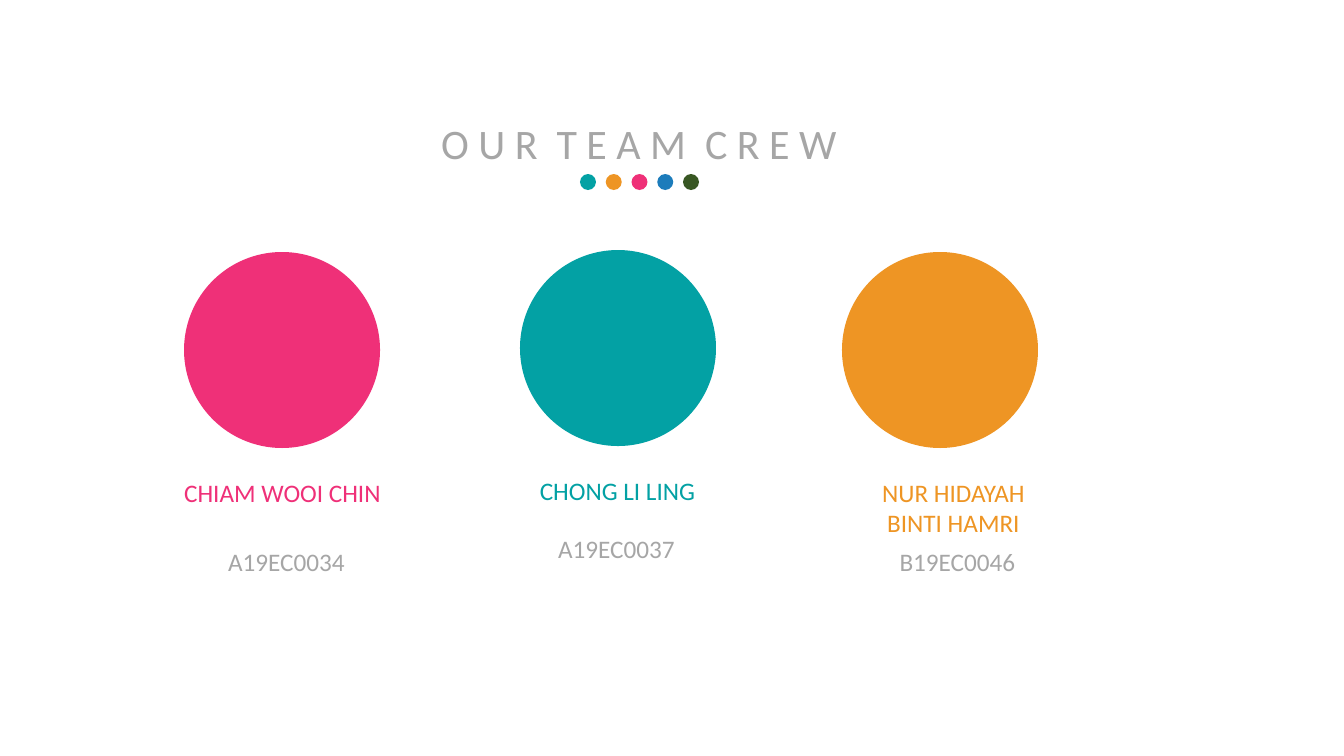
"""Build the team crew slide: a title, a row of dots and three members."""
from pptx import Presentation
from pptx.dml.color import RGBColor
from pptx.enum.shapes import MSO_SHAPE
from pptx.enum.text import PP_ALIGN
from pptx.util import Emu, Pt

TEAL = RGBColor(0x03, 0xA1, 0xA4)
ORANGE = RGBColor(0xEE, 0x95, 0x24)
PINK = RGBColor(0xEF, 0x30, 0x78)
BLUE = RGBColor(0x1C, 0x7C, 0xBB)
GREEN = RGBColor(0x38, 0x57, 0x23)
GRAY = RGBColor(0xA6, 0xA6, 0xA6)

FONT = "Calibri"
TITLE = "O U R  T E A M  C R E W"
TITLE_BOX = (338, 113, 602, 61)
DOT_COLORS = [TEAL, ORANGE, PINK, BLUE, GREEN]
DOTS_LEFT, DOTS_TOP, DOT_SIZE, DOTS_SPAN = 580, 174, 16, 103
PORTRAIT_SIZE, LABEL_WIDTH, LINE_HEIGHT = 196, 219, 40
MEMBERS = [
    {"name": "CHIAM WOOI CHIN", "matric": "A19EC0034", "color": PINK,
     "portrait_at": (184, 252), "name_at": (173, 472), "matric_at": (177, 541)},
    {"name": "CHONG LI LING", "matric": "A19EC0037", "color": TEAL,
     "portrait_at": (520, 250), "name_at": (508, 470), "matric_at": (507, 528)},
    {"name": "NUR HIDAYAH BINTI HAMRI", "matric": "B19EC0046", "color": ORANGE,
     "portrait_at": (842, 252), "name_at": (844, 472), "matric_at": (848, 541)},
]


def px(length):
    return Emu(round(length * 914400 / 100.8))


def add_circle(slide, left, top, size, color):
    circle = slide.shapes.add_shape(
        MSO_SHAPE.OVAL, px(left), px(top), px(size), px(size))
    circle.shadow.inherit = False
    circle.fill.solid()
    circle.fill.fore_color.rgb = color
    circle.line.fill.background()


def add_label(slide, text, box, size, color):
    frame = slide.shapes.add_textbox(*map(px, box)).text_frame
    frame.word_wrap = True
    frame.text = text
    paragraph = frame.paragraphs[0]
    paragraph.alignment = PP_ALIGN.CENTER
    font = paragraph.runs[0].font
    font.name = FONT
    font.size = Pt(size)
    font.color.rgb = color


def main():
    deck = Presentation()
    deck.slide_width, deck.slide_height = px(1344), px(756)
    slide = deck.slides.add_slide(deck.slide_layouts[6])

    add_label(slide, TITLE, TITLE_BOX, 30, GRAY)
    dot_pitch = DOTS_SPAN / (len(DOT_COLORS) - 1)
    for index, color in enumerate(DOT_COLORS):
        add_circle(slide, DOTS_LEFT + index * dot_pitch, DOTS_TOP, DOT_SIZE, color)

    for member in MEMBERS:
        add_circle(slide, *member["portrait_at"], PORTRAIT_SIZE, member["color"])
        name_height = member["matric_at"][1] - member["name_at"][1]
        add_label(slide, member["name"],
                  (*member["name_at"], LABEL_WIDTH, name_height), 18, member["color"])
        add_label(slide, member["matric"],
                  (*member["matric_at"], LABEL_WIDTH, LINE_HEIGHT), 18, GRAY)

    deck.save("out.pptx")


if __name__ == "__main__":
    main()
